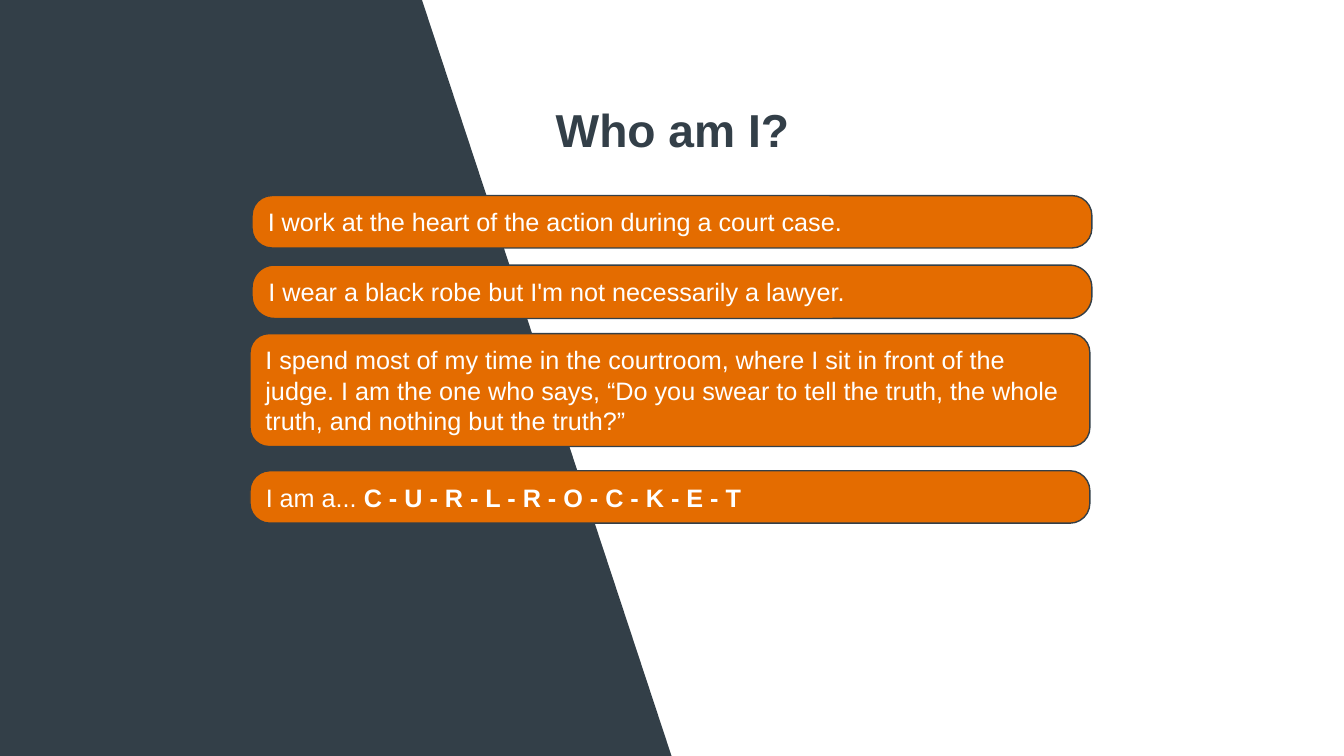
from pptx import Presentation
from pptx import util as u
from pptx.dml import color
from pptx.enum import shapes, text

SLATE, ORANGE, WHITE = "333F48", "E46C00", "FFFFFF"


def rgb(hex_code):
    return color.RGBColor.from_string(hex_code)


def add_span(para, words, size=18, ink=WHITE, bold=False, font="Arial"):
    span = para.add_run()
    span.text = words
    span.font.name = font
    span.font.size = u.Pt(size)
    span.font.bold = bold
    span.font.color.rgb = rgb(ink)


class RiddleSlide:
    """Holds the style and the current slide."""

    def __init__(self, deck):
        self.page = deck.slides.add_slide(deck.slide_layouts[6])
        self.page.background.fill.solid()
        self.page.background.fill.fore_color.rgb = rgb(WHITE)

    def shape(self, kind, bounds, fill, line=None, adjust=None):
        box = self.page.shapes.add_shape(kind, *map(u.Inches, bounds))
        box.shadow.inherit = False
        box.fill.solid()
        box.fill.fore_color.rgb = rgb(fill)
        if line:
            box.line.color.rgb = rgb(line)
            box.line.width = u.Pt(1)
        else:
            box.line.fill.background()
        if adjust is not None:
            box.adjustments[0] = adjust
        return box

    def fill_text(self, box, spans, align, anchor):
        frame = box.text_frame
        frame.word_wrap = True
        frame.auto_size = text.MSO_AUTO_SIZE.SHAPE_TO_FIT_TEXT
        frame.vertical_anchor = anchor
        para = frame.paragraphs[0]
        para.alignment = align
        for words, style in spans:
            add_span(para, words, **style)

    def clue(self, left, top, height, adjust, spans):
        box = self.shape(shapes.MSO_SHAPE.ROUNDED_RECTANGLE, (left, top, 8.33, height),
                         ORANGE, SLATE, adjust)
        self.fill_text(box, spans, text.PP_ALIGN.LEFT, text.MSO_ANCHOR.MIDDLE)

    def title(self, bounds, words):
        box = self.page.shapes.add_textbox(*map(u.Inches, bounds))
        self.fill_text(box, [(words, dict(size=33, ink=SLATE, bold=True))],
                       text.PP_ALIGN.CENTER, text.MSO_ANCHOR.TOP)


def main():
    deck = Presentation()
    deck.slide_width, deck.slide_height = u.Inches(13.33), u.Inches(7.5)
    riddle = RiddleSlide(deck)

    # Slanted dark panel
    riddle.shape(shapes.MSO_SHAPE.TRAPEZOID, (-3.06, 0, 9.72, 7.5), SLATE, adjust=0.33)

    # Clues: left, top, height, corner rounding, spans
    clues = [
        (2.5, 1.94, 0.52, 0.38,
         [("I work at the heart of the action during a court case.", {})]),
        (2.5, 2.63, 0.53, 0.42,
         [("I wear a black robe but I'm not necessarily a lawyer.", {})]),
        (2.48, 3.31, 1.12, None,
         [("I spend most of my time in the courtroom, where I sit in front of the judge. "
           "I am the one who says, “Do you swear to tell the truth, the whole truth, "
           "and nothing but the truth?”", {})]),
        (2.48, 4.67, 0.52, 0.38,
         [("I am a... ", {}),
          ("C - U - R - L - R - O - C - K - E - T", dict(bold=True))]),
    ]
    for clue in clues:
        riddle.clue(*clue)

    # Title
    riddle.title((4.08, 0.96, 5.18, 0.66), "Who am I?")

    deck.save("out.pptx")


if __name__ == "__main__":
    main()
